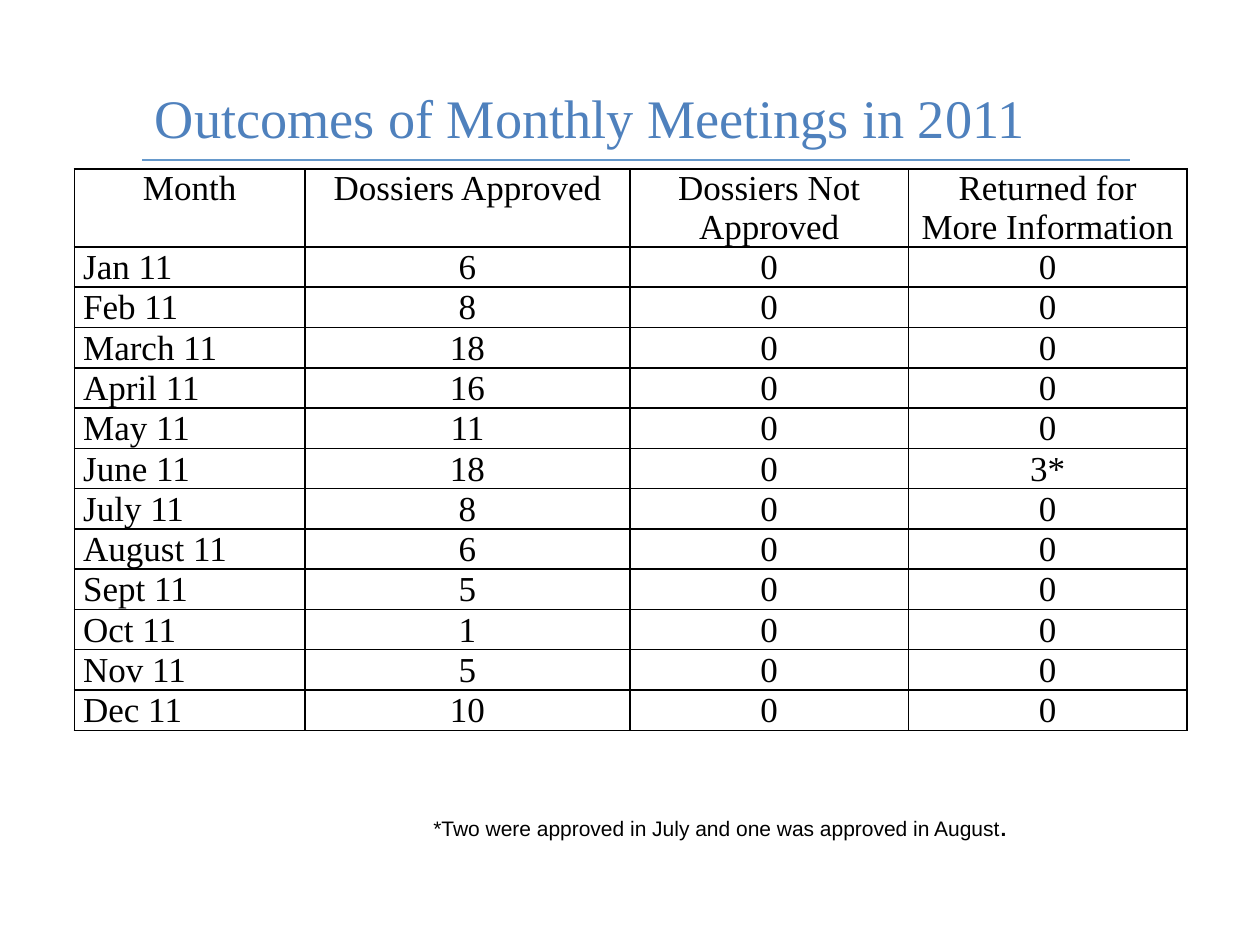
from typing import NamedTuple

from lxml import etree
from pptx import Presentation
from pptx.dml.color import RGBColor
from pptx.enum.shapes import MSO_CONNECTOR
from pptx.enum.text import MSO_ANCHOR, PP_ALIGN
from pptx.oxml.ns import qn
from pptx.util import Inches, Pt

LEFT, CENTER = PP_ALIGN.LEFT, PP_ALIGN.CENTER
TOP, MIDDLE, BOTTOM = MSO_ANCHOR.TOP, MSO_ANCHOR.MIDDLE, MSO_ANCHOR.BOTTOM
STRAIGHT = MSO_CONNECTOR.STRAIGHT

BLACK = RGBColor(0x00, 0x00, 0x00)
WHITE = RGBColor(0xFF, 0xFF, 0xFF)
TITLE_BLUE = RGBColor(0x4F, 0x81, 0xBD)
RULE_BLUE = RGBColor(0x66, 0x99, 0xCC)
SERIF, SANS = "Times New Roman", "Arial"


class Outcome(NamedTuple):
    month: str
    approved: str
    not_approved: str = "0"
    returned: str = "0"


HEADER = Outcome("Month", "Dossiers Approved", "Dossiers Not Approved",
                 "Returned for More Information")
OUTCOMES = [
    Outcome("Jan 11", "6"),
    Outcome("Feb 11", "8"),
    Outcome("March 11", "18"),
    Outcome("April 11", "16"),
    Outcome("May 11", "11"),
    Outcome("June 11", "18", returned="3*"),
    Outcome("July 11", "8"),
    Outcome("August 11", "6"),
    Outcome("Sept 11", "5"),
    Outcome("Oct 11", "1"),
    Outcome("Nov 11", "5"),
    Outcome("Dec 11", "10"),
]
COLUMN_WIDTHS = [1.83, 2.58, 2.21, 2.21]
HEADER_HEIGHT, ROW_HEIGHT = 0.62, 0.32


def set_font(font, name: str, size: float, color: RGBColor) -> None:
    font.name, font.size = name, Pt(size)
    font.color.rgb = color


def add_borders(cell) -> None:
    properties = cell._tc.get_or_add_tcPr()
    for position, side in enumerate(("a:lnL", "a:lnR", "a:lnT", "a:lnB")):
        line = etree.Element(qn(side), w=str(Pt(1)))
        fill = etree.SubElement(line, qn("a:solidFill"))
        etree.SubElement(fill, qn("a:srgbClr"), val=str(BLACK))
        properties.insert(position, line)


def fill_cell(cell, text: str, align: PP_ALIGN, anchor: MSO_ANCHOR) -> None:
    cell.text_frame.text = text
    cell.vertical_anchor = anchor
    cell.margin_left = cell.margin_right = Inches(0.07)
    cell.margin_top = cell.margin_bottom = 0
    para = cell.text_frame.paragraphs[0]
    para.alignment = align
    set_font(para.runs[0].font, SERIF, 20, BLACK)
    cell.fill.background()
    add_borders(cell)


def add_title(page) -> None:
    title = page.shapes.title
    title.left, title.top = Inches(1.13), Inches(0.3)
    title.width, title.height = Inches(8.37), Inches(1.25)
    frame = title.text_frame
    frame.text = "Outcomes of Monthly Meetings in 2011"
    frame.vertical_anchor = MIDDLE
    para = frame.paragraphs[0]
    para.alignment = LEFT
    set_font(para.runs[0].font, SERIF, 31, TITLE_BLUE)


def add_title_rule(page) -> None:
    rule = page.shapes.add_connector(STRAIGHT, Inches(1.13), Inches(1.27),
                                     Inches(8.97), Inches(1.27))
    rule.line.color.rgb = RULE_BLUE
    rule.line.width = Pt(0.75)
    etree.SubElement(rule._element.spPr, qn("a:effectLst"))


def add_outcome_table(page) -> None:
    rows = [HEADER, *OUTCOMES]
    height = HEADER_HEIGHT + ROW_HEIGHT * len(OUTCOMES)
    table = page.shapes.add_table(
        len(rows), len(COLUMN_WIDTHS), Inches(0.59), Inches(1.34),
        Inches(sum(COLUMN_WIDTHS)), Inches(height)).table
    table.first_row = table.horz_banding = False
    for column, width in zip(table.columns, COLUMN_WIDTHS):
        column.width = Inches(width)
    for r, outcome in enumerate(rows):
        is_header = r == 0
        table.rows[r].height = Inches(HEADER_HEIGHT if is_header else ROW_HEIGHT)
        for c, text in enumerate(outcome):
            fill_cell(table.cell(r, c), text,
                      CENTER if is_header or c > 0 else LEFT,
                      TOP if is_header else BOTTOM)


def add_footnote(page) -> None:
    box = page.shapes.add_textbox(Inches(3.34), Inches(6.42),
                                  Inches(6.08), Inches(0.3))
    frame = box.text_frame
    frame.word_wrap = True
    frame.vertical_anchor = MIDDLE
    para = frame.paragraphs[0]
    for text in ("*Two were approved in July and one was approved in August", "."):
        span = para.add_run()
        span.text = text
        set_font(span.font, SANS, 12, BLACK)
    para.runs[-1].font.bold = True


def main() -> None:
    deck = Presentation()
    deck.slide_width, deck.slide_height = Inches(10), Inches(7.5)
    page = deck.slides.add_slide(deck.slide_layouts[5])
    page.background.fill.solid()
    page.background.fill.fore_color.rgb = WHITE
    add_title_rule(page)
    add_title(page)
    add_outcome_table(page)
    add_footnote(page)
    deck.save("out.pptx")


if __name__ == "__main__":
    main()
